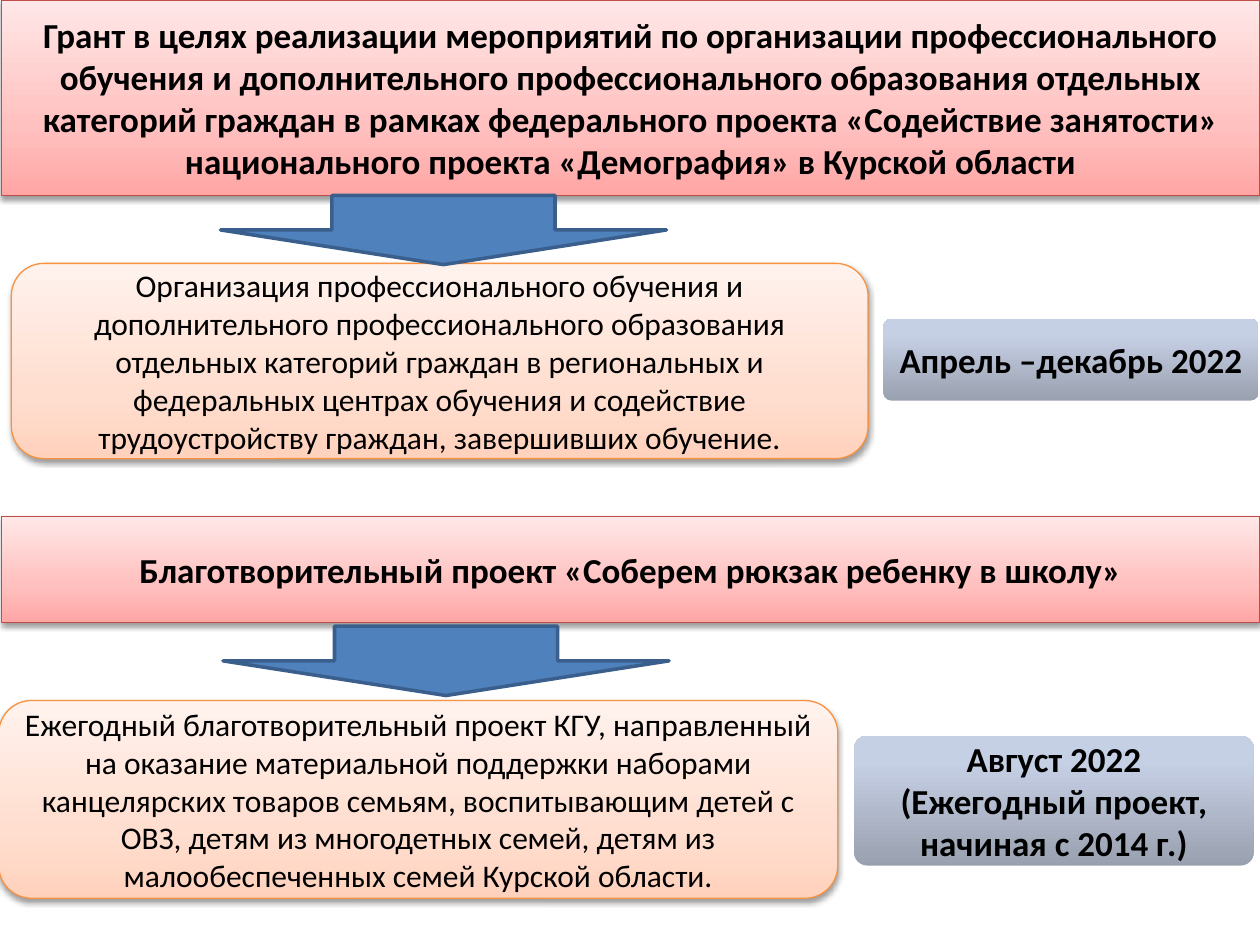
import pptx
import pptx.util
import pptx.dml.color
import pptx.enum.shapes
import pptx.enum.text
import pptx.oxml
import pptx.oxml.ns
import lxml.etree

Inches = pptx.util.Inches
Pt = pptx.util.Pt
qn = pptx.oxml.ns.qn
Kind = pptx.enum.shapes.MSO_SHAPE

PARTS = [
    {
        "head": ("Грант в целях реализации мероприятий по организации профессионального "
                 "обучения и дополнительного профессионального образования отдельных "
                 "категорий граждан в рамках федерального проекта «Содействие занятости» "
                 "национального проекта «Демография» в Курской области"),
        "goal": ("Организация профессионального обучения и дополнительного "
                 "профессионального образования отдельных категорий граждан в "
                 "региональных и федеральных центрах обучения и содействие "
                 "трудоустройству граждан, завершивших обучение."),
        "date": "Апрель –декабрь 2022",
        "top": 0, "tall": 1.55,
        "arrow": (1.75, 1.55),
        "card": (0.09, 2.09, 6.8, 1.55),
        "badge": (7.01, 2.53, 2.98, 0.65),
    },
    {
        "head": "Благотворительный проект «Соберем рюкзак ребенку в школу»",
        "goal": ("Ежегодный благотворительный проект КГУ, направленный на оказание "
                 "материальной поддержки наборами канцелярских товаров семьям, "
                 "воспитывающим детей с ОВЗ, детям из многодетных семей, детям из "
                 "малообеспеченных семей Курской области."),
        "date": "Август 2022\n(Ежегодный проект, начиная с 2014 г.)",
        "top": 4.1, "tall": 0.84,
        "arrow": (1.77, 4.97),
        "card": (-0.01, 5.56, 6.66, 1.57),
        "badge": (6.78, 5.84, 3.17, 1.03),
    },
]

THEME = {
    "font": "Calibri", "ink": "000000",
    "head": {"size": 20, "bold": True, "line": "BF4C48", "shade": True,
             "stops": [(0, "FFA6A5"), (35, "FFC0BF"), (100, "FFE7E7")]},
    "card": {"size": 18, "bold": False, "line": "F69240", "shade": True,
             "stops": [(0, "FFD2BD"), (35, "FFDED0"), (100, "FFF2ED")]},
    "badge": {"size": 20, "bold": True, "line": None, "shade": False,
              "stops": [(0, "99A0B0"), (80, "C6D0E4"), (100, "C6D1E6")]},
    "arrow": {"fill": "4F81BD", "line": "3A5F8C"},
}


def tint(code):
    return pptx.dml.color.RGBColor.from_string(code)


def node(base, tag, **attrs):
    return lxml.etree.SubElement(base, qn(tag), {k: str(v) for k, v in attrs.items()})


def blend(shape, stops):
    shape.fill.gradient()
    grad = shape._element.spPr.find(qn("a:gradFill"))
    for child in list(grad):
        grad.remove(child)
    items = node(grad, "a:gsLst")
    for place, code in stops:
        stop = node(items, "a:gs", pos=place * 1000)
        node(stop, "a:srgbClr", val=code)
    node(grad, "a:lin", ang=270 * 60000, scaled=0)


def shade(shape):
    effects = shape._element.spPr.find(qn("a:effectLst"))
    outer = node(effects, "a:outerShdw", blurRad=Pt(3.1), dist=Pt(1.6),
                 dir=90 * 60000, rotWithShape=0)
    color = node(outer, "a:srgbClr", val=THEME["ink"])
    node(color, "a:alpha", val=38000)


def write(shape, text, look):
    frame = shape.text_frame
    frame.text = text
    frame.word_wrap = True
    frame.auto_size = pptx.enum.text.MSO_AUTO_SIZE.NONE
    frame.vertical_anchor = pptx.enum.text.MSO_ANCHOR.MIDDLE
    for para in frame.paragraphs:
        para.alignment = pptx.enum.text.PP_ALIGN.CENTER
        for run in para.runs:
            run.font.name = THEME["font"]
            run.font.size = Pt(look["size"])
            run.font.bold = look["bold"]
            run.font.color.rgb = tint(THEME["ink"])


def style(shape, text, look):
    shape.shadow.inherit = False
    blend(shape, look["stops"])
    if look["line"]:
        shape.line.color.rgb = tint(look["line"])
        shape.line.width = Pt(0.75)
    else:
        shape.line.fill.background()
    if look["shade"]:
        shade(shape)
    write(shape, text, look)


def main():
    deck = pptx.Presentation()
    deck.slide_width, deck.slide_height = Inches(10), Inches(7.5)
    slide = deck.slides.add_slide(deck.slide_layouts[5])
    title = slide.shapes.title

    def add(kind, box):
        return slide.shapes.add_shape(kind, *map(Inches, box))

    for part in PARTS:
        box = (0.01, part["top"], 9.99, part["tall"])
        if part is PARTS[0]:
            head = title
            head.left, head.top, head.width, head.height = map(Inches, box)
        else:
            head = add(Kind.RECTANGLE, box)
        style(head, part["head"], THEME["head"])

        card = add(Kind.ROUNDED_RECTANGLE, part["card"])
        style(card, part["goal"], THEME["card"])

        badge = add(Kind.ROUNDED_RECTANGLE, part["badge"])
        badge.adjustments[0] = 0.1
        style(badge, part["date"], THEME["badge"])

        arrow = add(Kind.DOWN_ARROW, (*part["arrow"], 3.54, 0.55))
        arrow.shadow.inherit = False
        arrow.fill.solid()
        arrow.fill.fore_color.rgb = tint(THEME["arrow"]["fill"])
        arrow.line.color.rgb = tint(THEME["arrow"]["line"])
        arrow.line.width = Pt(2)

    deck.save("out.pptx")


if __name__ == "__main__":
    main()
